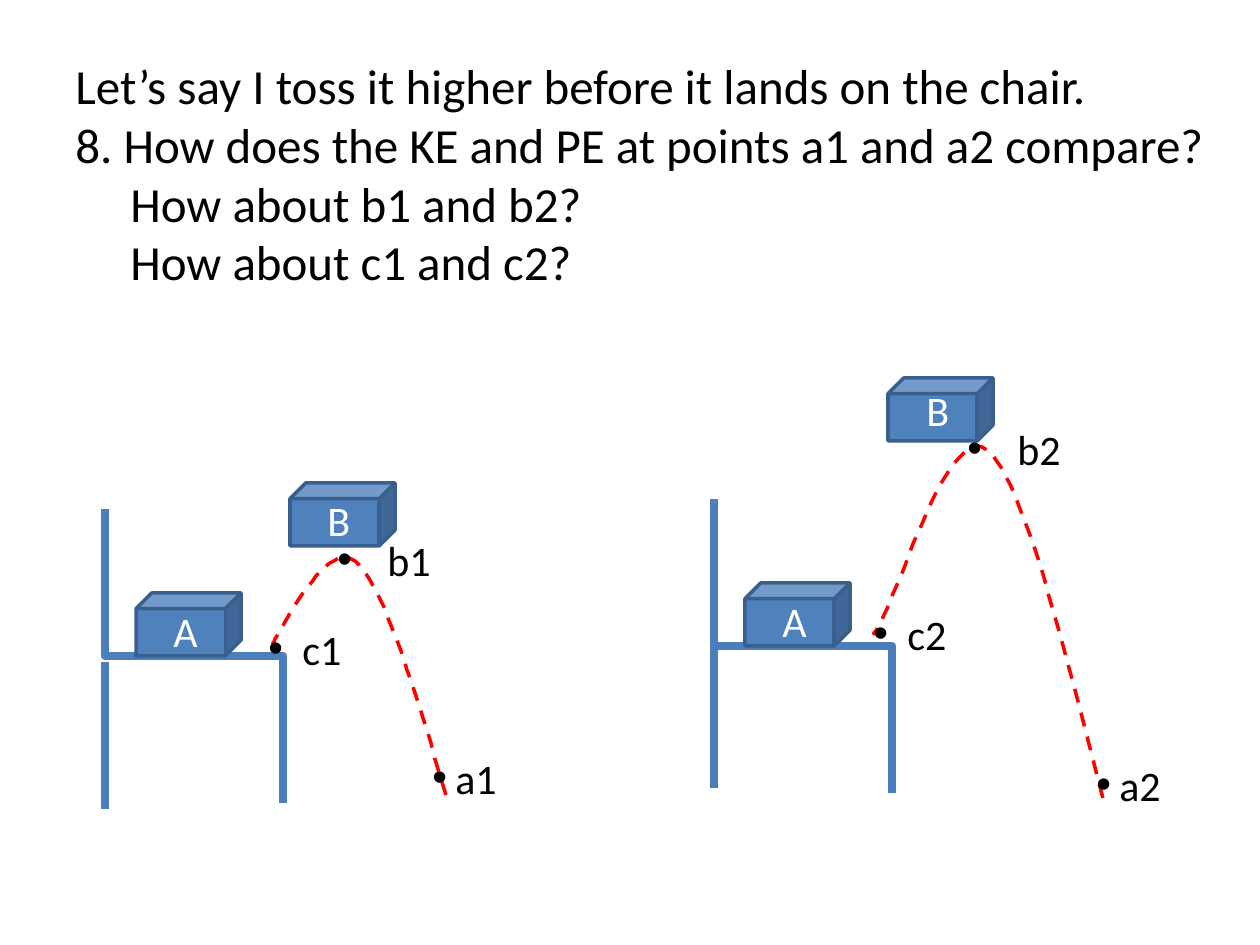
from pptx import Presentation
from pptx.dml.color import RGBColor
from pptx.enum.dml import MSO_LINE
from pptx.enum.shapes import MSO_CONNECTOR, MSO_SHAPE
from pptx.enum.text import MSO_ANCHOR
from pptx.oxml.ns import qn
from pptx.util import Pt
from lxml import etree

PX = 914400 // 126
COLORS = {"text": "000000", "label": "FFFFFF", "chair": "4B7EBC",
          "cube": "4F81BD", "edge": "3A5F8C", "path": "FF0000"}

presentation = Presentation()
presentation.slide_width = 1260 * PX
presentation.slide_height = 945 * PX
slide = presentation.slides.add_slide(presentation.slide_layouts[6])
shapes = slide.shapes


def add_text(left, top, width, height, lines, size, color, indent=0, bullet=False):
    """Add a text box; lines is a list of (left margin, text)."""
    box = shapes.add_textbox(left * PX, top * PX, width * PX, height * PX)
    frame = box.text_frame
    frame.word_wrap = True
    frame.vertical_anchor = MSO_ANCHOR.MIDDLE
    for number, (margin, text) in enumerate(lines):
        paragraph = frame.add_paragraph() if number else frame.paragraphs[0]
        properties = paragraph._p.get_or_add_pPr()
        properties.set("marL", str(margin * PX))
        if bullet:
            properties.set("indent", str(-margin * PX))
            etree.SubElement(properties, qn("a:buFont")).set("typeface", "Arial")
            etree.SubElement(properties, qn("a:buChar")).set("char", "•")
        run = paragraph.add_run()
        run.text = text
        run.font.size = Pt(size)
        run.font.name = "Calibri"
        run.font.color.rgb = RGBColor.from_string(COLORS[color])


def style_line(shape, color, width):
    """Set the outline and drop the theme shadow."""
    shape.line.color.rgb = RGBColor.from_string(COLORS[color])
    shape.line.width = Pt(width)
    if shape._element.spPr.find(qn("a:effectLst")) is None:
        etree.SubElement(shape._element.spPr, qn("a:effectLst"))


# Question
add_text(63, 0, 1197, 346, [
    (0, "Let’s say I toss it higher before it lands on the chair."),
    (0, "8. How does the KE and PE at points a1 and a2 compare?"),
    (55, "How about b1 and b2?"),
    (55, "How about c1 and c2?"),
], 28, "text")

# Each curve is a start point followed by cubic Bézier segments
scenes = [
    {"chair": (714, 499), "leg": 142, "cube B": (888, 378), "B": (914, 378),
     "curve": [(1103, 798), (1063, 643), (1023, 479), (987, 450),
               (950, 420), (900, 588), (882, 620),
               (864, 651), (882, 617), (882, 640)],
     "points": [("a2", 1084, 753, 23), ("b2", 955, 417, 50), ("c2", 861, 602, 34)]},
    {"chair": (105, 509), "leg": 153, "cube B": (290, 483), "B": (315, 488),
     "curve": [(446, 795), (415, 690), (384, 586), (355, 561),
               (326, 536), (273, 644), (273, 644)],
     "points": [("a1", 420, 746, 23), ("b1", 325, 528, 50), ("c1", 256, 617, 34)]},
]
SEAT, HEIGHT, LEG = 178, 294, 147
STEPS = 24

for scene in scenes:
    # Chair: back, seat and front leg as a turned elbow, then the rear leg
    x, y = scene["chair"]
    middle_x, middle_y = x + SEAT // 2, y + HEIGHT // 2
    elbow = shapes.add_connector(
        MSO_CONNECTOR.ELBOW,
        (middle_x + HEIGHT // 2) * PX, (middle_y - SEAT // 2) * PX,
        (middle_x - HEIGHT // 2) * PX, (middle_y + SEAT // 2) * PX)
    elbow._element.spPr.find(qn("a:xfrm")).set("rot", str(270 * 60000))
    leg_top = y + scene["leg"]
    leg = shapes.add_connector(MSO_CONNECTOR.STRAIGHT, x * PX, leg_top * PX,
                               x * PX, (leg_top + LEG) * PX)
    for part in (elbow, leg):
        style_line(part, "chair", 5)

    # Blocks and their letters
    for left, top in (scene["cube B"], (x + 31, y + 84)):
        cube = shapes.add_shape(MSO_SHAPE.CUBE, left * PX, top * PX, 105 * PX, 63 * PX)
        cube.shadow.inherit = False
        cube.fill.solid()
        cube.fill.fore_color.rgb = RGBColor.from_string(COLORS["cube"])
        style_line(cube, "edge", 2)
    for letter, (left, top) in (("A", (x + 56, y + 90)), ("B", scene["B"])):
        add_text(left, top, 95, 63, [(0, letter)], 24, "label")

    # Toss path
    curve = scene["curve"]
    vertices = []
    for start in range(0, len(curve) - 1, 3):
        segment = curve[start:start + 4]
        for step in range(1, STEPS + 1):
            t = step / STEPS
            weights = ((1 - t) ** 3, 3 * t * (1 - t) ** 2, 3 * t ** 2 * (1 - t), t ** 3)
            vertices.append([sum(w * point[axis] for w, point in zip(weights, segment))
                             for axis in (0, 1)])
    builder = shapes.build_freeform(*curve[0], scale=PX)
    builder.add_line_segments(vertices, close=False)
    toss = builder.convert_to_shape()
    toss.shadow.inherit = False
    toss.fill.background()
    style_line(toss, "path", 2)
    toss.line.dash_style = MSO_LINE.DASH

    # Marked points
    for name, left, top, gap in scene["points"]:
        add_text(left, top, 126, 63, [(gap, name)], 24, "text", bullet=True)

presentation.save("out.pptx")
